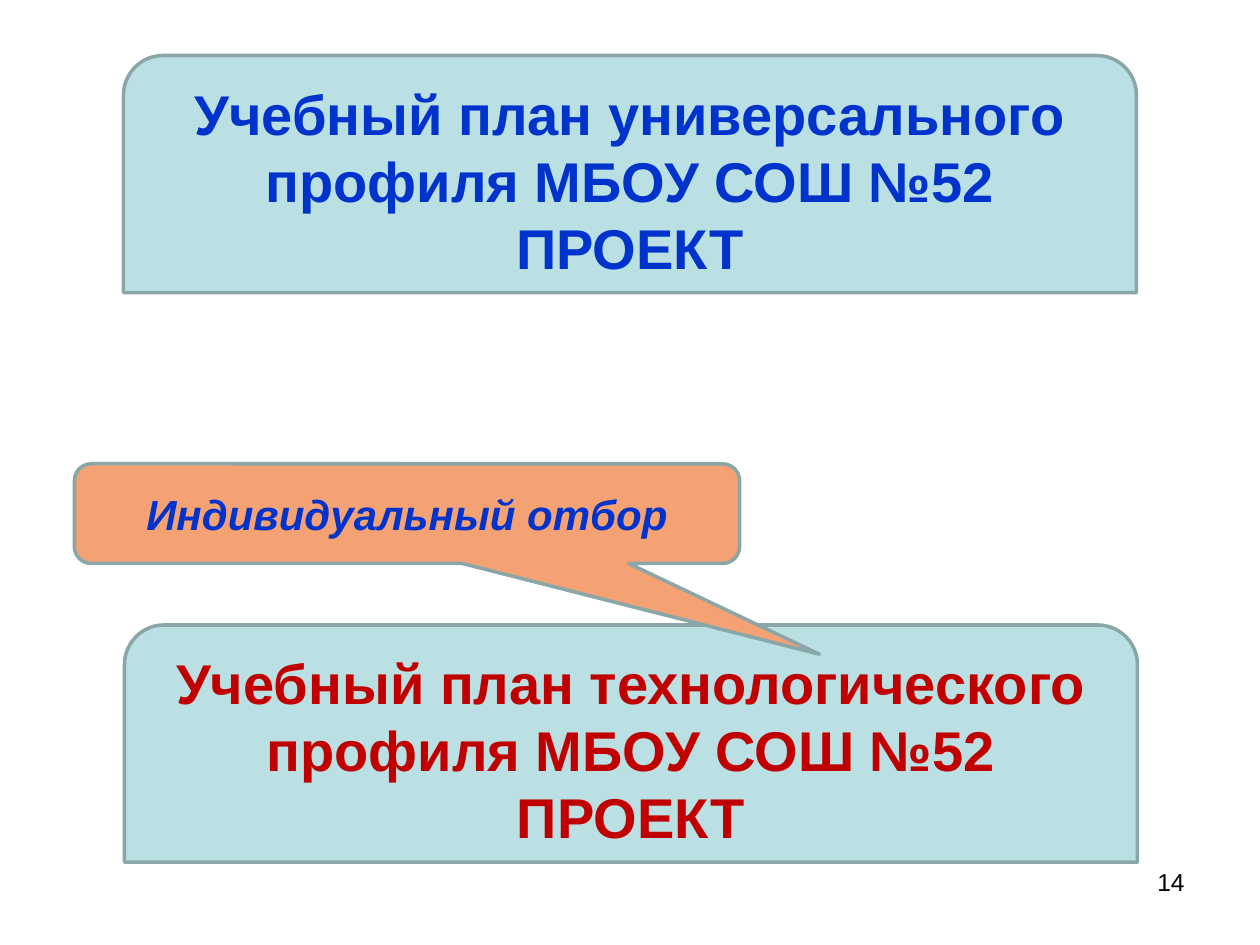
import pptx
from pptx.dml.color import RGBColor
from pptx.enum.shapes import MSO_SHAPE
from pptx.enum.text import MSO_ANCHOR, PP_ALIGN
from pptx.util import Cm, Pt

# Content: places are left, top, width, height in centimetres
PLAN_FORMAT = {"size": Pt(32), "bold": True}
PLAN = {"kind": MSO_SHAPE.ROUND_2_SAME_RECTANGLE, "fill": "BBE0E3", "format": PLAN_FORMAT}
SHAPES = [
    {**PLAN, "place": (2.49, 1.12, 20.42, 4.78), "color": "0033CC",
     "lines": ["Учебный план универсального профиля МБОУ СОШ №52", "ПРОЕКТ"]},
    {**PLAN, "place": (2.51, 12.6, 20.42, 4.78), "color": "C00000",
     "lines": ["Учебный план технологического профиля МБОУ СОШ №52", "ПРОЕКТ"]},
    {"kind": MSO_SHAPE.ROUNDED_RECTANGULAR_CALLOUT, "fill": "F4A274",
     "place": (1.5, 9.35, 13.41, 2.01), "color": "0033CC",
     "adjustments": (0.62, 1.41, 0.17),
     "format": {"size": Pt(24), "bold": True, "italic": True},
     "lines": ["Индивидуальный отбор"]},
]
NUMBER = {"place": (18.21, 17.35, 5.92, 1.32), "lines": ["14"], "color": "000000",
          "format": {"size": Pt(14)}}
LINE_COLOR = "8AA6A8"


def paint(color_format, color):
    color_format.rgb = RGBColor.from_string(color)


def write(shape, item, alignment, anchor):
    frame = shape.text_frame
    frame.word_wrap = True
    frame.vertical_anchor = anchor
    frame.text = "\n".join(item["lines"])
    for paragraph in frame.paragraphs:
        paragraph.alignment = alignment
        font = paragraph.runs[0].font
        for name, value in {"name": "Arial", **item["format"]}.items():
            setattr(font, name, value)
        paint(font.color, item["color"])


def add_panel(slide, item):
    shape = slide.shapes.add_shape(item["kind"], *map(Cm, item["place"]))
    shape.shadow.inherit = False
    for index, value in enumerate(item.get("adjustments", ())):
        shape.adjustments[index] = value
    shape.fill.solid()
    paint(shape.fill.fore_color, item["fill"])
    paint(shape.line.color, LINE_COLOR)
    shape.line.width = Pt(2)
    write(shape, item, PP_ALIGN.CENTER, MSO_ANCHOR.MIDDLE)


def main():
    presentation = pptx.Presentation()
    presentation.slide_width, presentation.slide_height = Cm(25.4), Cm(19.05)
    slide = presentation.slides.add_slide(presentation.slide_layouts[6])

    # Page number
    number = slide.shapes.add_textbox(*map(Cm, NUMBER["place"]))
    write(number, NUMBER, PP_ALIGN.RIGHT, MSO_ANCHOR.TOP)

    # Plan panels, then the callout over the lower one
    for item in SHAPES:
        add_panel(slide, item)

    presentation.save("out.pptx")


if __name__ == "__main__":
    main()
